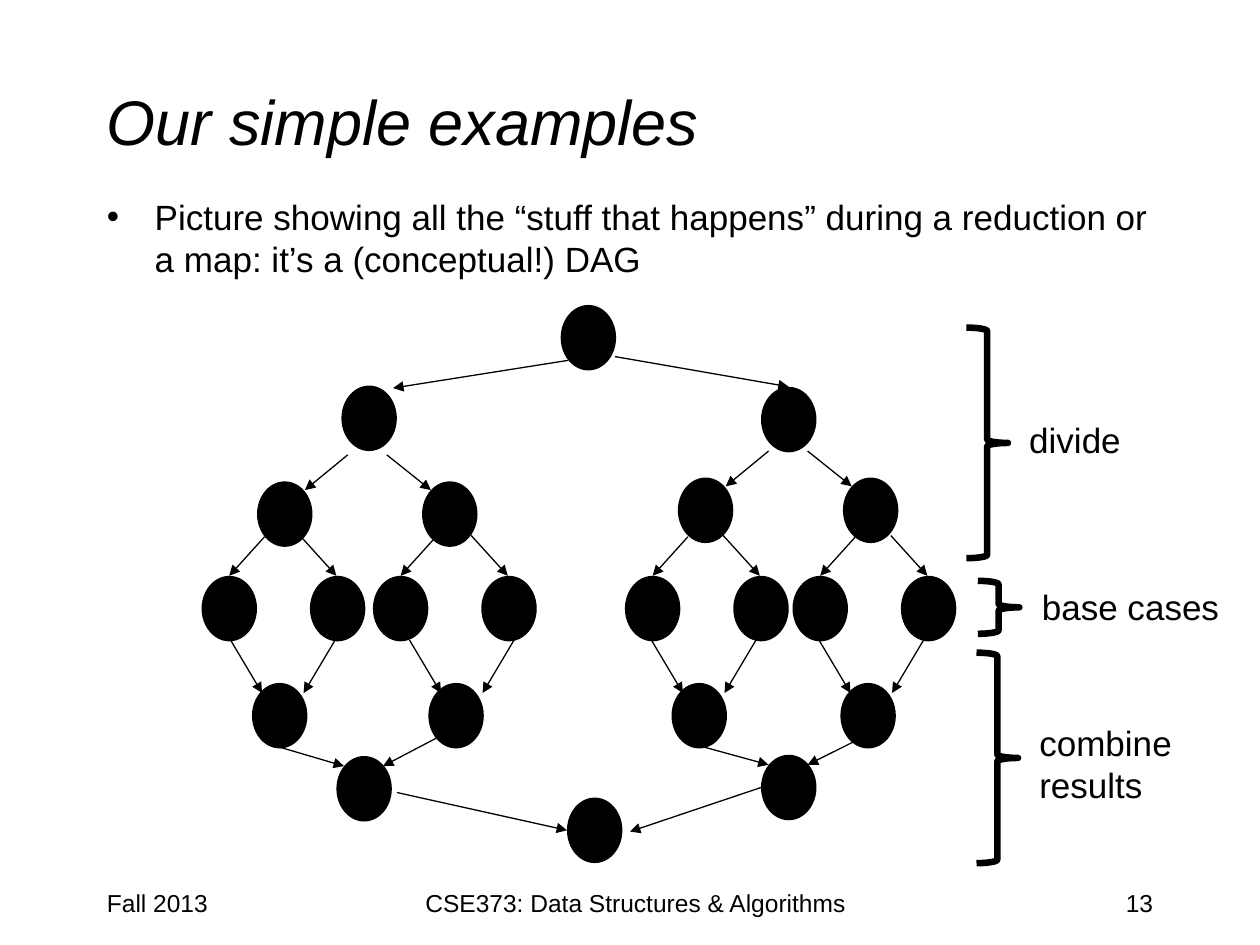
from lxml import etree
from pptx import Presentation
from pptx.dml.color import RGBColor
from pptx.enum import shapes, text
from pptx.oxml.ns import qn
from pptx.util import Inches, Pt

prs = Presentation()
prs.slide_width, prs.slide_height = Inches(10), Inches(7.5)
s = prs.slides.add_slide(prs.slide_layouts[6])
BLACK = "000000"


def color(fmt, hex_str):
    fmt.rgb = RGBColor.from_string(hex_str)


def add_text(words, box, size=20, italic=False, align="LEFT", anchor="TOP", wrap=True):
    tf = s.shapes.add_textbox(*map(Inches, box)).text_frame
    tf.word_wrap = wrap
    tf.vertical_anchor = getattr(text.MSO_ANCHOR, anchor)
    p = tf.paragraphs[0]
    p.alignment = getattr(text.PP_ALIGN, align)
    r = p.add_run()
    r.text = words
    r.font.name, r.font.size, r.font.italic = "Arial", Pt(size), italic
    color(r.font.color, BLACK)
    return p


# Title and bullet
add_text("Our simple examples", (0.75, 0.33, 8.5, 1.25), size=36, italic=True, anchor="MIDDLE")
p = add_text("Picture showing all the “stuff that happens” during a reduction or a map: "
             "it’s a (conceptual!) DAG", (0.75, 1.5, 8.5, 1.17))
p.space_before = Pt(4)
pPr = p._p.get_or_add_pPr()
pPr.set("marL", str(Inches(0.38)))
pPr.set("indent", str(Inches(-0.38)))
etree.SubElement(pPr, qn("a:buFont")).set("typeface", "Arial")
etree.SubElement(pPr, qn("a:buChar")).set("char", "•")

# Root and final result
nodes = [(4.45, 2.42), (4.5, 6.33)]
edges = [(4.51, 2.86, 3.12, 3.08), (4.88, 2.83, 6.26, 3.07),
         (3.15, 6.29, 4.5, 6.59), (6.04, 6.25, 5, 6.6)]

# Top of each half, with its two children
nodes += [(2.71, 3.06), (6.04, 3.07)]
for x, y in ((2.04, 3.82), (5.38, 3.79)):
    nodes += [(x, y), (x + 1.31, y)]
    edges += [(x + 0.72, y - 0.21, x + 0.38, y + 0.07),
              (x + 1.03, y - 0.21, x + 1.38, y + 0.07)]

# Base cases, in pairs
for x in (1.6, 2.96, 4.96, 6.29):
    nodes += [(x, 4.57), (x + 0.86, 4.57)]
    edges += [(x + 0.5, 4.26, x + 0.22, 4.57), (x + 0.78, 4.25, x + 1.07, 4.57)]

# Each pair combines into one node
nodes += [(x, 5.42) for x in (2, 3.4, 5.33, 6.67)]
for x in (1.83, 3.25, 5.17, 6.5):
    edges += [(x, 5.08, x + 0.25, 5.5), (x + 0.83, 5.08, x + 0.58, 5.5)]

# Each half combines into one node
for x, y in ((2.67, 6), (6.04, 5.99)):
    nodes.append((x, y))
    edges += [(x - 0.45, 5.93, x + 0.06, y + 0.08), (x + 0.79, 5.86, x + 0.37, y + 0.08)]

# Draw the graph
for x, y in nodes:
    sp = s.shapes.add_shape(shapes.MSO_SHAPE.OVAL, *map(Inches, (x, y, 0.44, 0.52)))
    sp.shadow.inherit = False
    sp.fill.solid()
    color(sp.fill.fore_color, BLACK)
    sp.line.fill.background()

for edge in edges:
    cx = s.shapes.add_connector(shapes.MSO_CONNECTOR.STRAIGHT, *map(Inches, edge))
    color(cx.line.color, BLACK)
    cx.line.width = Pt(0.75)
    etree.SubElement(cx.line._get_or_add_ln(), qn("a:tailEnd")).set("type", "triangle")
    etree.SubElement(cx._element.spPr, qn("a:effectLst"))

# Phase braces with labels
for x, y, h, label, box, wrap in (
    (7.67, 2.6, 1.83, "divide", (8.07, 3.27, 1.01, 0.44), False),
    (7.76, 4.61, 0.42, "base cases", (8.17, 4.6, 1.62, 0.44), False),
    (7.75, 5.18, 1.67, "combine results", (8.15, 5.68, 1.35, 0.77), True),
):
    sp = s.shapes.add_shape(shapes.MSO_SHAPE.LEFT_BRACE, *map(Inches, (x, y, 0.33, h)))
    sp.rotation = 180
    sp.shadow.inherit = False
    sp.fill.background()
    color(sp.line.color, BLACK)
    sp.line.width = Pt(3.75)
    add_text(label, box, wrap=wrap)

# Footer
for words, x, w, align in (
    ("Fall 2013", 0.75, 2.08, "LEFT"),
    ("CSE373: Data Structures & Algorithms", 3.17, 3.75, "CENTER"),
    ("13", 7.17, 2.08, "RIGHT"),
):
    add_text(words, (x, 7, w, 0.5), size=14, align=align)

prs.save("out.pptx")
